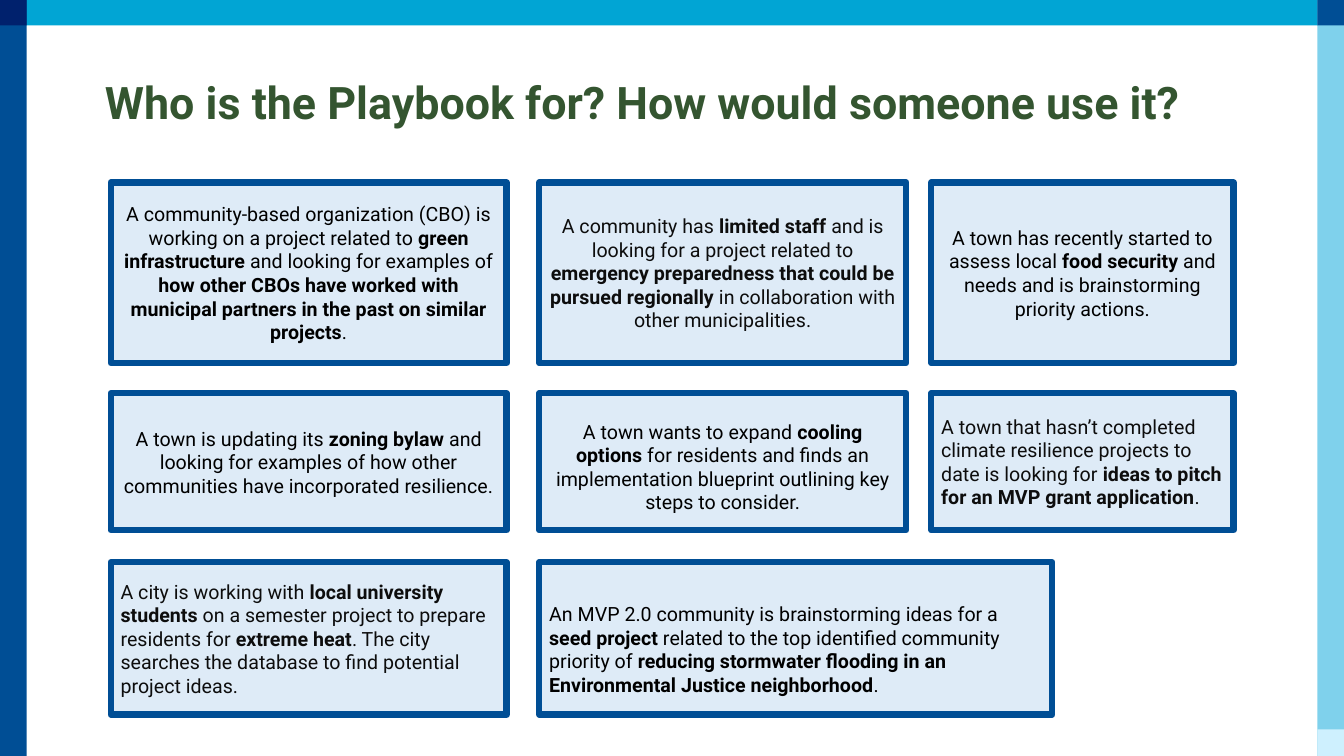
from pptx import Presentation
from pptx.dml.color import RGBColor
from pptx.enum.shapes import MSO_SHAPE
from pptx.enum.text import MSO_ANCHOR, MSO_AUTO_SIZE, PP_ALIGN
from pptx.util import Cm, Pt

RECT = MSO_SHAPE.RECTANGLE
MIDDLE = MSO_ANCHOR.MIDDLE
LEFT, CENTER = PP_ALIGN.LEFT, PP_ALIGN.CENTER
FONT = "Roboto"

COLORS = {
    "cyan": "01A5D4", "blue": "004E95", "navy": "00216D",
    "sky": "7FD1EC", "ice": "CEF0FE", "panel": "DEEBF7",
    "title": "345530", "black": "000000", "ink": "0D0D0D",
}

TITLE = "Who is the Playbook for? How would someone use it?"

# Runs alternate between regular and bold, starting with regular.
CARDS = [
    (0, 0, CENTER, "black", [
        "A community-based organization (CBO) is working on a project related to ",
        "green infrastructure", " and looking for examples of ",
        "how other CBOs have worked with municipal partners in the past on similar projects",
        "."]),
    (0, 1, CENTER, "ink", [
        "A community has ", "limited staff ",
        "and is looking for a project related to ",
        "emergency preparedness that could be pursued regionally",
        " in collaboration with other municipalities."]),
    (0, 2, CENTER, "black", [
        "A town has recently started to assess local ", "food security",
        " and needs and is brainstorming priority actions."]),
    (1, 0, CENTER, "black", [
        "A town is updating its ", "zoning bylaw",
        " and looking for examples of how other communities have incorporated resilience."]),
    (1, 1, CENTER, "black", [
        "A town wants to expand ", "cooling options",
        " for residents and finds an implementation blueprint outlining key steps to consider."]),
    (1, 2, LEFT, "ink", [
        "A town that hasn’t completed climate resilience projects to date is looking for ",
        "ideas to pitch for an MVP grant application", "."]),
    (2, 0, LEFT, "ink", [
        "A city is working with ", "local university students",
        " on a semester project to prepare residents for ", "extreme heat",
        ". The city searches the database to find potential project ideas."]),
    (2, 1, LEFT, "black", [
        "An MVP 2.0 community is brainstorming ideas for a ", "seed project",
        " related to the top identified community priority of ",
        "reducing stormwater flooding in an Environmental Justice neighborhood", "."]),
]

COLUMNS = [(2.79, 9.98), (13.59, 9.25), (23.47, 7.62)]
ROWS = [(4.6, 4.55), (9.91, 3.45), (14.17, 3.84)]
WIDE_CARD = (2, 1)
WIDE_WIDTH = 12.93
TOP_INSETS = {(1, 1): 0.38, (2, 1): 0.66}

WIDTH, HEIGHT, BAR = 33.87, 19.05, 0.67
RIGHT = WIDTH - BAR
FRAME = [
    (0, 0, WIDTH, BAR - 0.03, "cyan"),
    (0, 0, BAR, HEIGHT, "blue"),
    (0, 0, BAR, BAR - 0.03, "navy"),
    (RIGHT, 0, BAR, HEIGHT, "sky"),
    (RIGHT, 0, BAR, BAR - 0.03, "blue"),
    (RIGHT, HEIGHT - BAR, BAR, BAR, "ice"),
]


def rgb(name):
    return RGBColor.from_string(COLORS[name])


def add_rect(s, left, top, width, height, fill):
    sp = s.shapes.add_shape(RECT, Cm(left), Cm(top), Cm(width), Cm(height))
    sp.shadow.inherit = False
    sp.fill.solid()
    sp.fill.fore_color.rgb = rgb(fill)
    sp.line.fill.background()
    return sp


def add_run(p, text, size, color, bold):
    r = p.add_run()
    r.text = text
    r.font.name = FONT
    r.font.size = Pt(size)
    r.font.bold = bold
    r.font.color.rgb = rgb(color)


def add_card(s, row, col, align, color, runs):
    left, width = COLUMNS[col]
    top, height = ROWS[row]
    if (row, col) == WIDE_CARD:
        width = WIDE_WIDTH
    sp = add_rect(s, left, top, width, height, "panel")
    sp.line.color.rgb = rgb("blue")
    sp.line.width = Pt(4.5)
    tf = sp.text_frame
    tf.word_wrap = True
    tf.vertical_anchor = MIDDLE
    tf.margin_top = Cm(TOP_INSETS.get((row, col), 0.13))
    p = tf.paragraphs[0]
    p.alignment = align
    for i, text in enumerate(runs):
        add_run(p, text, 14, color, i % 2 == 1)


def main():
    prs = Presentation()
    prs.slide_width, prs.slide_height = Cm(WIDTH), Cm(HEIGHT)
    s = prs.slides.add_slide(prs.slide_layouts[5])
    for bar in FRAME:
        add_rect(s, *bar)

    title = s.shapes.title
    title.left, title.top = Cm(2.39), Cm(1.04)
    title.width, title.height = Cm(29.08), Cm(3.2)
    tf = title.text_frame
    tf.word_wrap = True
    tf.auto_size = MSO_AUTO_SIZE.NONE
    tf.vertical_anchor = MIDDLE
    p = tf.paragraphs[0]
    p.alignment = LEFT
    p.line_spacing = 0.9
    add_run(p, TITLE, 32, "title", True)

    for card in CARDS:
        add_card(s, *card)
    prs.save("out.pptx")


if __name__ == "__main__":
    main()
